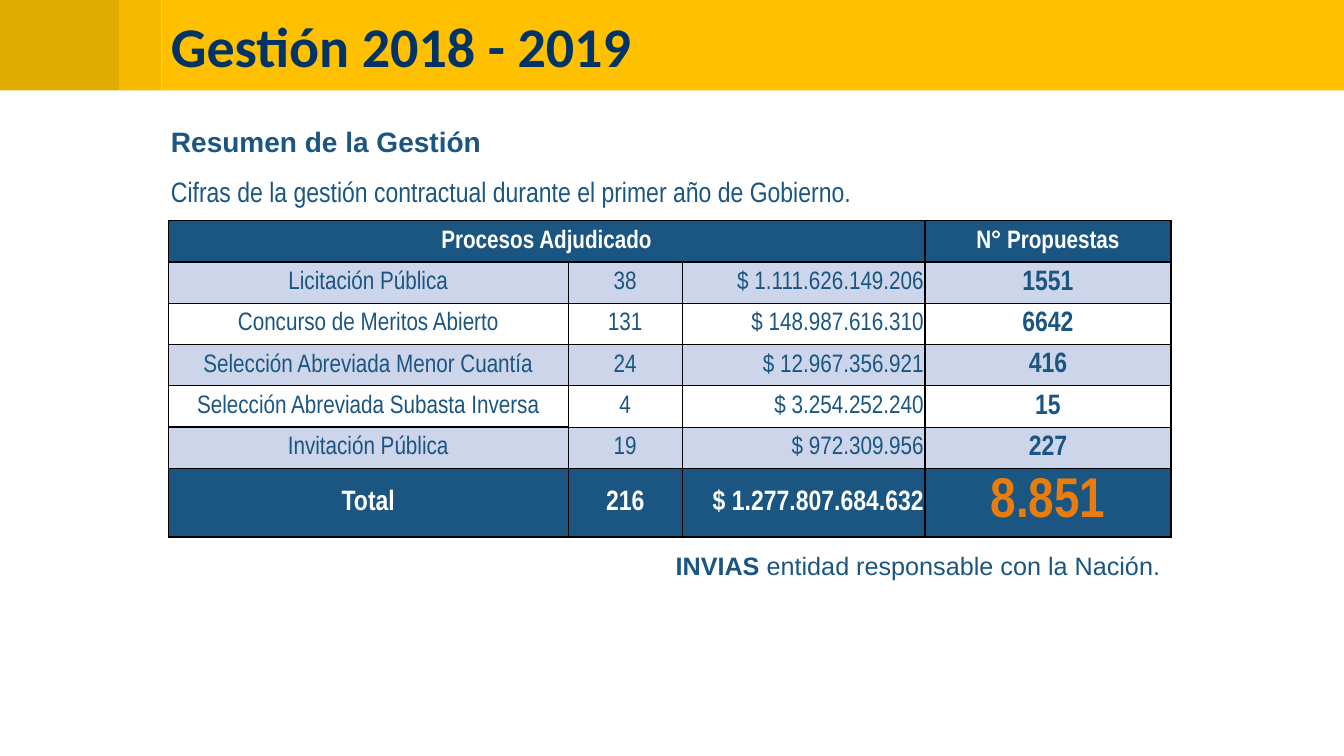
import pptx
import pptx.dml.color
import pptx.enum.shapes
import pptx.enum.text
import pptx.oxml
import pptx.oxml.ns
import pptx.util

Cm = pptx.util.Cm
Pt = pptx.util.Pt
RGBColor = pptx.dml.color.RGBColor
ALIGN = pptx.enum.text.PP_ALIGN
ANCHOR = pptx.enum.text.MSO_ANCHOR

AMBER = RGBColor(0xFF, 0xC0, 0x00)
DARK_AMBER = RGBColor(0xE1, 0xAC, 0x02)
MID_AMBER = RGBColor(0xF6, 0xBA, 0x01)
NAVY = RGBColor(0x00, 0x33, 0x66)
BLUE = RGBColor(0x1B, 0x55, 0x82)
PALE = RGBColor(0xCC, 0xD5, 0xEA)
WHITE = RGBColor(0xFF, 0xFF, 0xFF)
ORANGE = RGBColor(0xEA, 0x7C, 0x0B)

BANDS = [(3.0, DARK_AMBER), (1.07, MID_AMBER), (29.8, AMBER)]
BAND_TOP, BAND_HEIGHT = -0.03, 2.31

HEADING = {"name": "Arial", "size": Pt(20), "bold": True}
TEXTS = [
    {
        "place": (4.06, 0.08, 28.17, 2.31), "anchor": ANCHOR.MIDDLE,
        "format": {"alignment": ALIGN.LEFT, "line_spacing": 0.9},
        "paragraphs": [[("Gestión 2018 - 2019", NAVY,
                         {"name": "Calibri", "size": Pt(40), "bold": True})]],
    },
    {
        "place": (4.06, 2.59, 20.19, 2.67), "anchor": ANCHOR.TOP,
        "format": {"alignment": ALIGN.LEFT, "line_spacing": 1.5},
        "paragraphs": [
            [("Resumen de la Gestión", BLUE, HEADING)],
            [("Cifras de la gestión contractual durante el primer año de Gobierno.", BLUE,
              {"name": "Arial Narrow", "size": Pt(20), "bold": False})],
        ],
    },
    {
        "place": (9.98, 13.74, 19.51, 1.02), "anchor": ANCHOR.TOP,
        "format": {"alignment": ALIGN.RIGHT},
        "paragraphs": [[
            ("INVIAS ", BLUE, {"name": "Arial", "size": Pt(18), "bold": True}),
            ("entidad responsable con la Nación.", BLUE,
             {"name": "Arial", "size": Pt(18), "bold": False}),
        ]],
    },
]

ROWS = [
    ("Procesos Adjudicado", "", "", "N° Propuestas"),
    ("Licitación Pública", "38", "$ 1.111.626.149.206", "1551"),
    ("Concurso de Meritos Abierto", "131", "$ 148.987.616.310", "6642"),
    ("Selección Abreviada Menor Cuantía", "24", "$ 12.967.356.921", "416"),
    ("Selección Abreviada Subasta Inversa", "4", "$ 3.254.252.240", "15"),
    ("Invitación Pública", "19", "$ 972.309.956", "227"),
    ("Total", "216", "$ 1.277.807.684.632", "8.851"),
]
TABLE_LEFT, TABLE_TOP = 4.24, 5.56
COLUMN_WIDTHS = [10.08, 2.87, 6.12, 6.2]
ROW_HEIGHTS = [1.04] * 6 + [1.73]
COLUMN_ALIGNS = [ALIGN.CENTER, ALIGN.CENTER, ALIGN.RIGHT, ALIGN.CENTER]
CELL_FORMAT = {
    "margin_left": Cm(0.03), "margin_right": Cm(0.03), "margin_top": Cm(0.03),
    "margin_bottom": 0, "vertical_anchor": ANCHOR.MIDDLE,
}
LAST_ROW, LAST_COLUMN = len(ROWS) - 1, len(COLUMN_WIDTHS) - 1


def apply(target, values):
    for name, value in values.items():
        setattr(target, name, value)


def add_span(para, text, color, font):
    span = para.add_run()
    span.text = text
    apply(span.font, font)
    span.font.color.rgb = color


def add_bands(page):
    left = 0
    for width, color in BANDS:
        band = page.shapes.add_shape(
            pptx.enum.shapes.MSO_SHAPE.RECTANGLE,
            Cm(left), Cm(BAND_TOP), Cm(width), Cm(BAND_HEIGHT))
        band.shadow.inherit = False
        band.fill.solid()
        band.fill.fore_color.rgb = color
        band.line.fill.background()
        left += width


def add_text(page, content):
    box = page.shapes.add_textbox(*map(Cm, content["place"]))
    frame = box.text_frame
    apply(frame, {"word_wrap": True, "vertical_anchor": content["anchor"]})
    for index, spans in enumerate(content["paragraphs"]):
        para = frame.add_paragraph() if index else frame.paragraphs[0]
        apply(para, content["format"])
        for span in spans:
            add_span(para, *span)


def add_border(cell, side, width):
    cell._tc.get_or_add_tcPr().append(pptx.oxml.parse_xml(
        f'<a:ln{side} {pptx.oxml.ns.nsdecls("a")} w="{Pt(width)}">'
        f'<a:solidFill><a:srgbClr val="000000"/></a:solidFill></a:ln{side}>'))


def cell_look(row, column):
    if row == 0:
        return BLUE, WHITE, 18, True
    if row == LAST_ROW:
        return (BLUE, ORANGE, 40, True) if column == LAST_COLUMN else (BLUE, WHITE, 20, True)
    fill = PALE if row % 2 else None
    return (fill, BLUE, 20, True) if column == LAST_COLUMN else (fill, BLUE, 18, False)


def rule_width(line, column):
    return 0.5 if column and 2 <= line < LAST_ROW else 1


def add_figures(page):
    table = page.shapes.add_table(
        len(ROWS), len(COLUMN_WIDTHS), Cm(TABLE_LEFT), Cm(TABLE_TOP),
        Cm(sum(COLUMN_WIDTHS)), Cm(sum(ROW_HEIGHTS))).table
    apply(table, {"first_row": False, "horz_banding": False})
    for column, width in enumerate(COLUMN_WIDTHS):
        table.columns[column].width = Cm(width)
    for row, height in enumerate(ROW_HEIGHTS):
        table.rows[row].height = Cm(height)
        for column, text in enumerate(ROWS[row]):
            cell = table.cell(row, column)
            fill, color, size, bold = cell_look(row, column)
            apply(cell, CELL_FORMAT)
            for side, width in (("L", 1), ("R", 1), ("T", rule_width(row, column)),
                                ("B", rule_width(row + 1, column))):
                add_border(cell, side, width)
            if fill is None:
                cell.fill.background()
            else:
                cell.fill.solid()
                cell.fill.fore_color.rgb = fill
            if text:
                para = cell.text_frame.paragraphs[0]
                para.alignment = COLUMN_ALIGNS[column]
                add_span(para, text, color,
                         {"name": "Arial Narrow", "size": Pt(size), "bold": bold})
    table.cell(0, 0).merge(table.cell(0, 2))


def main():
    deck = pptx.Presentation()
    apply(deck, {"slide_width": Cm(33.87), "slide_height": Cm(19.05)})
    page = deck.slides.add_slide(deck.slide_layouts[6])
    add_bands(page)
    add_figures(page)
    for content in TEXTS:
        add_text(page, content)
    deck.save("out.pptx")


if __name__ == "__main__":
    main()
